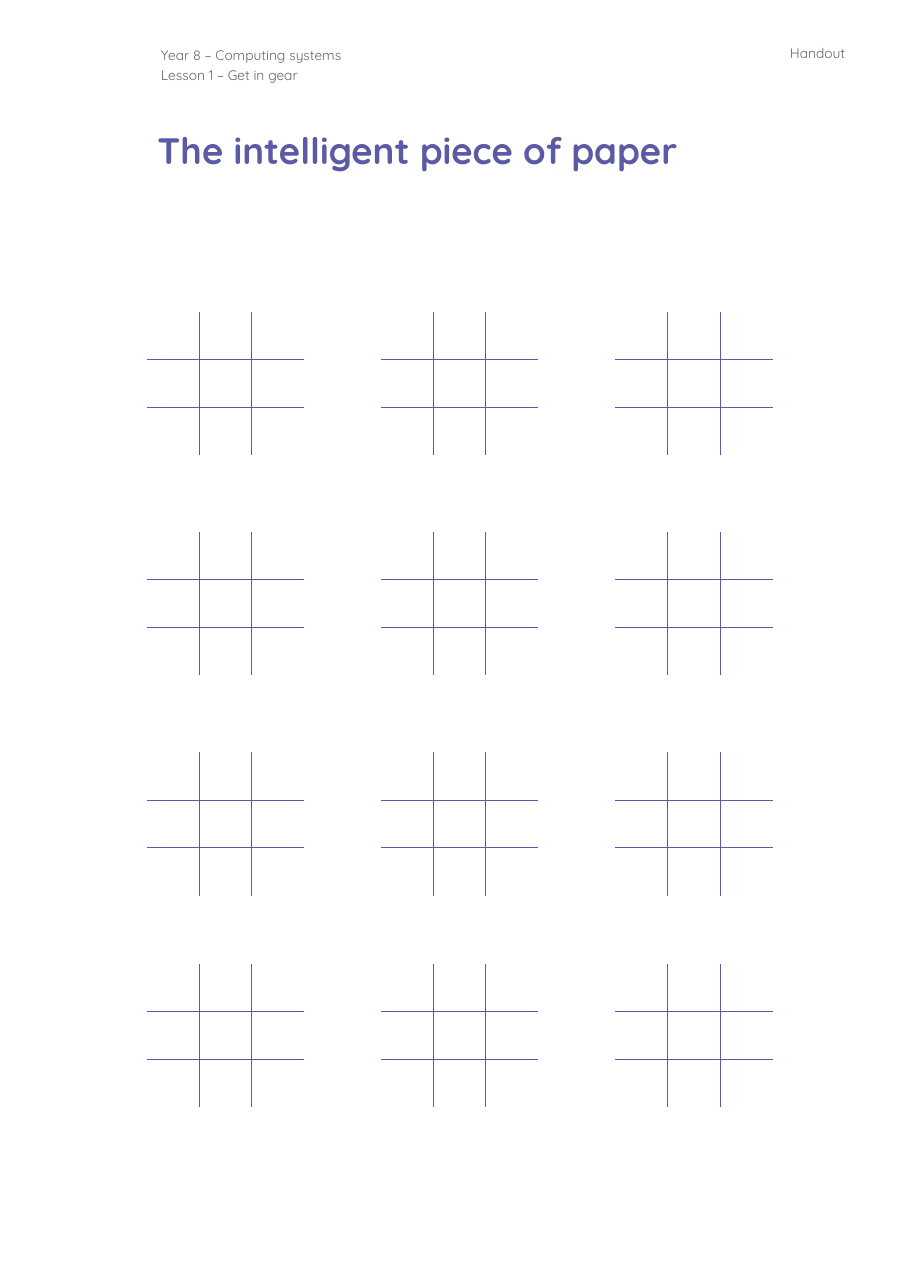
from pptx import Presentation
from pptx.dml.color import RGBColor
from pptx.enum import text
from pptx.oxml import xmlchemy
from pptx.util import Cm, Pt

HEADER = [["Year 8 – Computing systems", "Lesson 1 – Get in gear"], ["Handout"]]
TITLE = "The intelligent piece of paper"
FONT = "Quicksand"
PURPLE = RGBColor(0x5B, 0x5B, 0xA5)
GREY = RGBColor(0x66, 0x66, 0x66)

LEFT = 3.38
HEADER_WIDTHS = [6.76, 9.75]
HEADER_HEIGHT = 1.52
BOARD_LEFTS = [LEFT + 5.4 * column for column in range(3)]
BOARD_TOPS = [7.19, 12.27, 17.35, 22.23]
BOARD_SIZE = 3
CELL_WIDTH, CELL_HEIGHT = 1.21, 1.1


def style_paragraph(para, size, color, bold=False):
    para.font.name = FONT
    para.font.size = Pt(size)
    para.font.bold = bold
    para.font.color.rgb = color


def set_borders(cell, visible):
    properties = cell._tc.get_or_add_tcPr()
    for side in "LRTB":
        line = xmlchemy.OxmlElement(f"a:ln{side}")
        line.set("w", str(Pt(0.75)))
        if side in visible:
            fill = xmlchemy.OxmlElement("a:solidFill")
            color = xmlchemy.OxmlElement("a:srgbClr")
            color.set("val", str(PURPLE))
            fill.append(color)
        else:
            fill = xmlchemy.OxmlElement("a:noFill")
        line.append(fill)
        properties.append(line)
    cell.fill.background()


def add_plain_table(page, left, top, widths, heights):
    frame = page.shapes.add_table(len(heights), len(widths), Cm(left), Cm(top),
                                  Cm(sum(widths)), Cm(sum(heights)))
    table = frame.table
    table.first_row = False
    table.horz_banding = False
    for column, width in zip(table.columns, widths):
        column.width = Cm(width)
    for row, height in zip(table.rows, heights):
        row.height = Cm(height)
    return table


def add_header(page):
    table = add_plain_table(page, LEFT, 0.84, HEADER_WIDTHS, [HEADER_HEIGHT])
    for index, lines in enumerate(HEADER):
        cell = table.cell(0, index)
        set_borders(cell, "")
        cell.margin_top = cell.margin_bottom = Cm(0.18)
        cell.margin_left = Cm(0.33)
        cell.margin_right = Cm(0.41)
        cell.text = "\n".join(lines)
        for para in cell.text_frame.paragraphs:
            style_paragraph(para, 9, GREY)
            if index == 0:
                para.line_spacing = 1.15
            else:
                para.alignment = text.PP_ALIGN.RIGHT


def add_title(page):
    title = page.shapes.title
    title.left, title.top, title.width, title.height = Cm(LEFT), Cm(2.54), Cm(15.67), Cm(2.41)
    frame = title.text_frame
    frame.text = TITLE
    frame.word_wrap = True
    frame.auto_size = text.MSO_AUTO_SIZE.NONE
    frame.vertical_anchor = text.MSO_ANCHOR.TOP
    frame.margin_left = frame.margin_right = Cm(0.25)
    frame.margin_top = frame.margin_bottom = Cm(0.25)
    para = frame.paragraphs[0]
    para.alignment = text.PP_ALIGN.LEFT
    para.line_spacing = 1.15
    para.space_before = Pt(0)
    style_paragraph(para, 24, PURPLE, bold=True)


def add_board(page, left, top):
    table = add_plain_table(page, left, top, [CELL_WIDTH] * BOARD_SIZE, [CELL_HEIGHT] * BOARD_SIZE)
    last = BOARD_SIZE - 1
    for row in range(BOARD_SIZE):
        for column in range(BOARD_SIZE):
            inner = {"L": column > 0, "R": column < last, "T": row > 0, "B": row < last}
            cell = table.cell(row, column)
            set_borders(cell, [side for side, shown in inner.items() if shown])
            style_paragraph(cell.text_frame.paragraphs[0], 9, GREY)


def main():
    deck = Presentation()
    deck.slide_width, deck.slide_height = Cm(21), Cm(29.7)
    page = deck.slides.add_slide(deck.slide_layouts[5])
    add_header(page)
    add_title(page)
    for top in BOARD_TOPS:
        for left in BOARD_LEFTS:
            add_board(page, left, top)
    deck.save("out.pptx")


if __name__ == "__main__":
    main()
